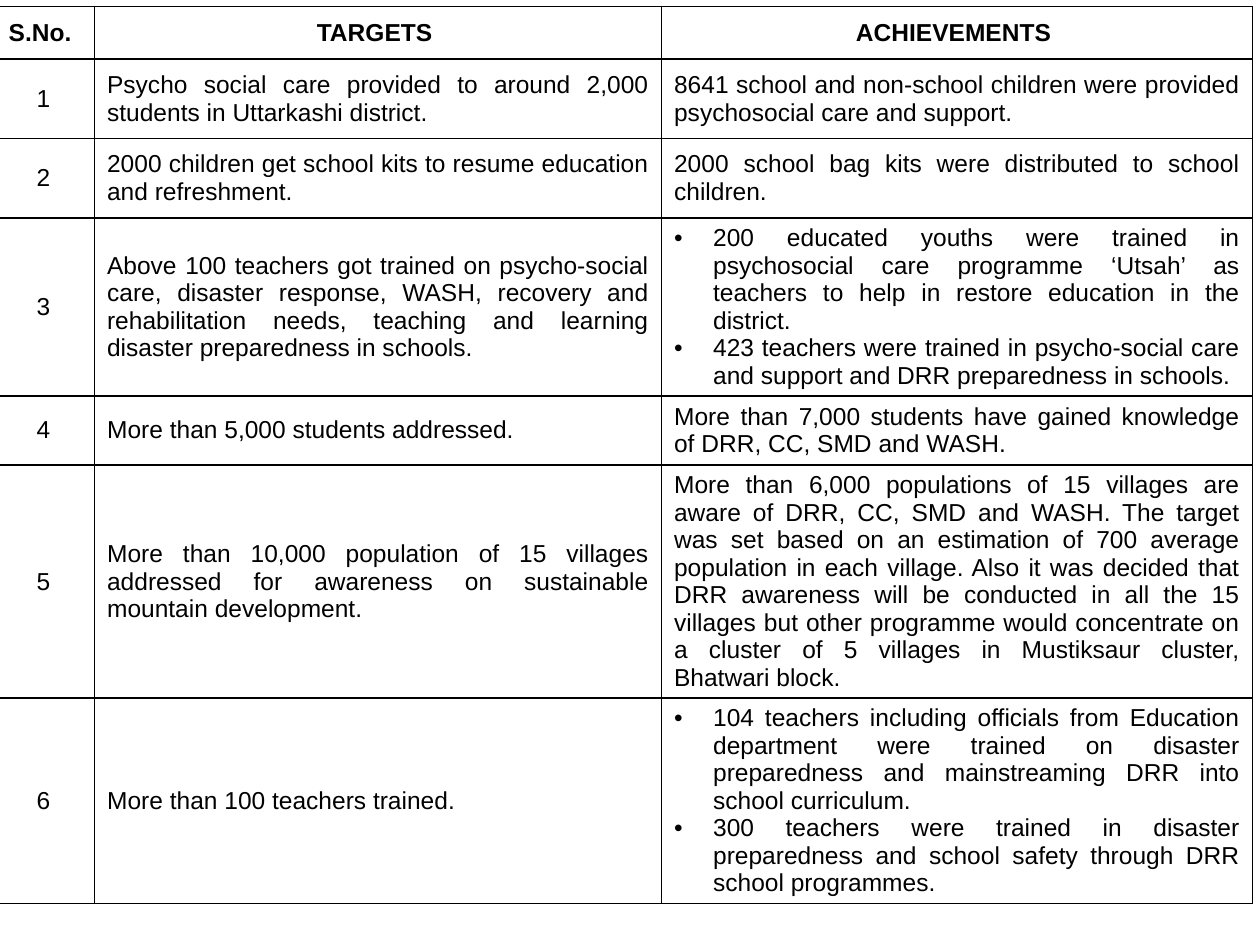
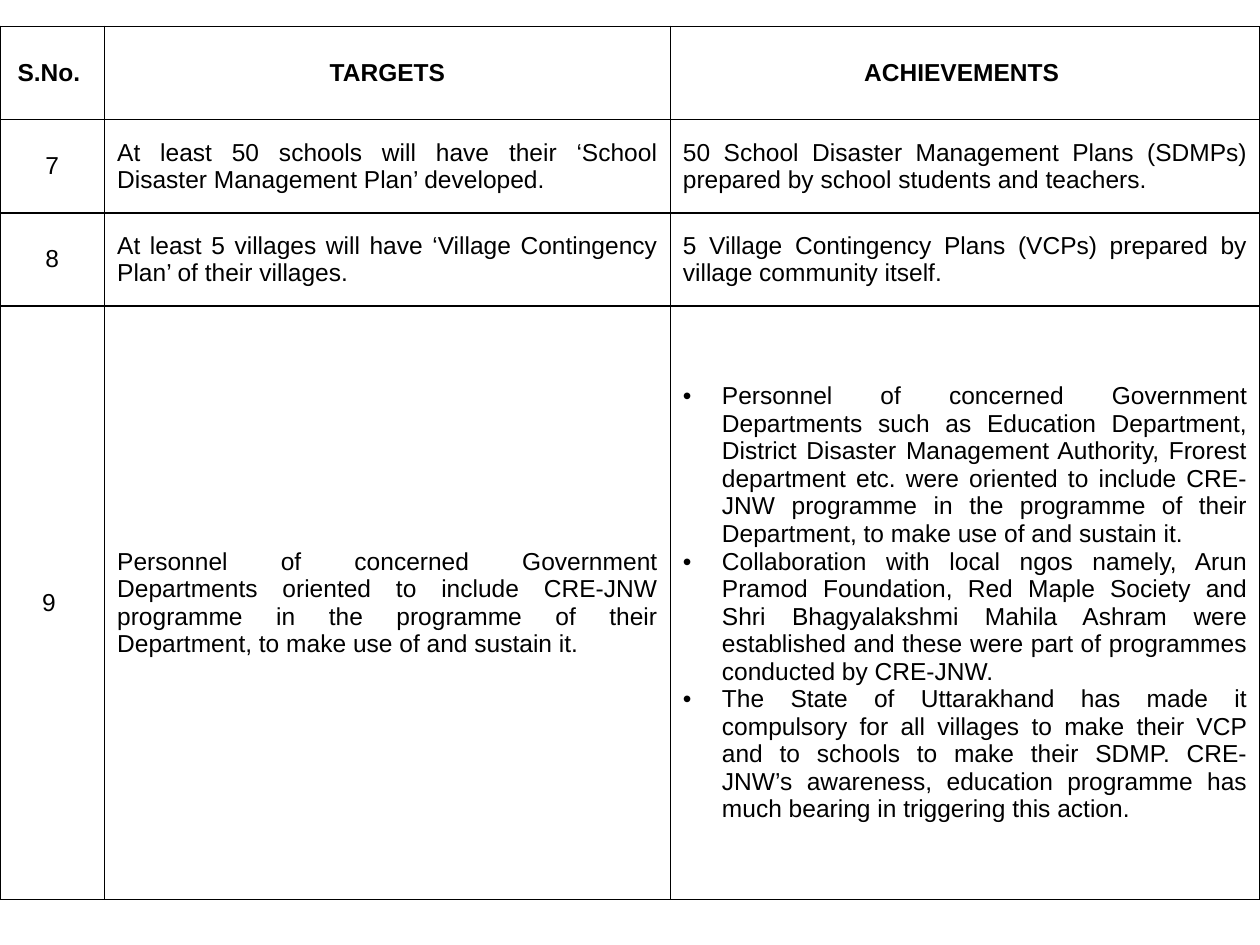
import pptx
import pptx.dml.color
import pptx.enum.text
import pptx.oxml.ns
import pptx.util
from lxml import etree

INK = "000000"
BORDER_PT = 1
INDENT = pptx.util.Inches(0.31)
FONT = {"name": "Arial", "size": pptx.util.Pt(14)}
ALIGN = pptx.enum.text.PP_ALIGN
MIDDLE = pptx.enum.text.MSO_ANCHOR.MIDDLE


def rgb(value):
    return pptx.dml.color.RGBColor.from_string(value)


def add_xml(parent, tag, **attrs):
    return etree.SubElement(parent, pptx.oxml.ns.qn(tag), attrs)


# A list in a cell stands for bullets; a string is one plain paragraph.
tables = [
    {
        "left": -0.06, "top": 0.05,
        "cols": [0.81, 4.5, 4.69],
        "rows": [0.42, 0.63, 0.63, 1.41, 0.55, 1.85, 1.63],
        "cells": [
            ("S.No. ", "TARGETS ", "ACHIEVEMENTS "),
            ("1",
             "Psycho social care provided to around 2,000 students in Uttarkashi district. ",
             "8641 school and non-school children were provided psychosocial care "
             "and support. "),
            ("2",
             "2000 children get school kits to resume education and refreshment. ",
             "2000 school bag kits were distributed to school children."),
            ("3",
             "Above 100 teachers got trained on psycho-social care, disaster response, "
             "WASH, recovery and rehabilitation needs, teaching and learning disaster "
             "preparedness in schools. ",
             ["200 educated youths were trained in psychosocial care programme ‘Utsah’ "
              "as teachers to help in restore education in the district. ",
              "423 teachers were trained in psycho-social care and support and DRR "
              "preparedness in schools. "]),
            ("4",
             "More than 5,000 students addressed. ",
             "More than 7,000 students have gained knowledge of DRR, CC, SMD and WASH."),
            ("5",
             "More than 10,000 population of 15 villages addressed for awareness on "
             "sustainable mountain development. ",
             "More than 6,000 populations of 15 villages are aware of DRR, CC, SMD and "
             "WASH. The target was set based on an estimation of 700 average population "
             "in each village. Also it was decided that DRR awareness will be conducted "
             "in all the 15 villages but other programme would concentrate on a cluster "
             "of 5 villages in Mustiksaur cluster, Bhatwari block."),
            ("6",
             "More than 100 teachers trained. ",
             ["104 teachers including officials from Education department were trained "
              "on disaster preparedness and mainstreaming DRR into school curriculum. ",
              "300 teachers were trained in disaster preparedness and school safety "
              "through DRR school programmes. "]),
        ],
    },
    {
        "left": 0, "top": 0.21,
        "cols": [0.83, 4.49, 4.68],
        "rows": [0.74, 0.74, 0.74, 4.71],
        "cells": [
            ("S.No. ", "TARGETS", "ACHIEVEMENTS "),
            ("7",
             "At least 50 schools will have their ‘School Disaster Management Plan’ "
             "developed.",
             "50 School Disaster Management Plans (SDMPs) prepared by school students "
             "and teachers."),
            ("8",
             "At least 5 villages will have ‘Village Contingency Plan’ of their villages. ",
             "5 Village Contingency Plans (VCPs) prepared by village community itself."),
            ("9 ",
             "Personnel of concerned Government Departments oriented to include CRE-JNW "
             "programme in the programme of their Department, to make use of and "
             "sustain it.",
             ["Personnel of concerned Government Departments such as Education "
              "Department, District Disaster Management Authority, Frorest department "
              "etc. were oriented to include CRE-JNW programme in the programme of "
              "their Department, to make use of and sustain it.",
              "Collaboration with local ngos namely, Arun Pramod Foundation, Red Maple "
              "Society and Shri Bhagyalakshmi Mahila Ashram were established and these "
              "were part of programmes conducted by CRE-JNW. ",
              "The State of Uttarakhand has made it compulsory for all villages to make "
              "their VCP and to schools to make their SDMP. CRE-JNW’s awareness, "
              "education programme has much bearing in triggering this action."]),
        ],
    },
]

prs = pptx.Presentation()
prs.slide_width = pptx.util.Inches(10)
prs.slide_height = pptx.util.Inches(7.5)

for spec_table in tables:
    s = prs.slides.add_slide(prs.slide_layouts[6])
    cols, rows = spec_table["cols"], spec_table["rows"]
    frame = [spec_table["left"], spec_table["top"], sum(cols), sum(rows)]
    table = s.shapes.add_table(len(rows), len(cols), *map(pptx.util.Inches, frame)).table
    table.first_row = table.horz_banding = False
    for col, width in zip(table.columns, cols):
        col.width = pptx.util.Inches(width)
    for row, height in zip(table.rows, rows):
        row.height = pptx.util.Inches(height)

    for i, texts in enumerate(spec_table["cells"]):
        for j, text in enumerate(texts):
            cell = table.cell(i, j)
            cell.vertical_anchor = MIDDLE
            tcPr = cell._tc.get_or_add_tcPr()
            for side in ("a:lnL", "a:lnR", "a:lnT", "a:lnB"):
                ln = add_xml(tcPr, side, w=str(pptx.util.Pt(BORDER_PT)))
                add_xml(add_xml(ln, "a:solidFill"), "a:srgbClr", val=INK)
            cell.fill.background()

            bulleted = isinstance(text, list)
            tf = cell.text_frame
            for n, line in enumerate(text if bulleted else [text]):
                p = tf.add_paragraph() if n else tf.paragraphs[0]
                p.alignment = ALIGN.CENTER if i == 0 or j == 0 else ALIGN.JUSTIFY
                if bulleted:
                    pPr = p._p.get_or_add_pPr()
                    pPr.set("marL", str(INDENT))
                    pPr.set("indent", str(-INDENT))
                    add_xml(pPr, "a:buFont", typeface=FONT["name"])
                    add_xml(pPr, "a:buChar", char="•")
                r = p.add_run()
                r.text = line
                for name, value in {**FONT, "bold": i == 0}.items():
                    setattr(r.font, name, value)
                r.font.color.rgb = rgb(INK)

prs.save("out.pptx")
